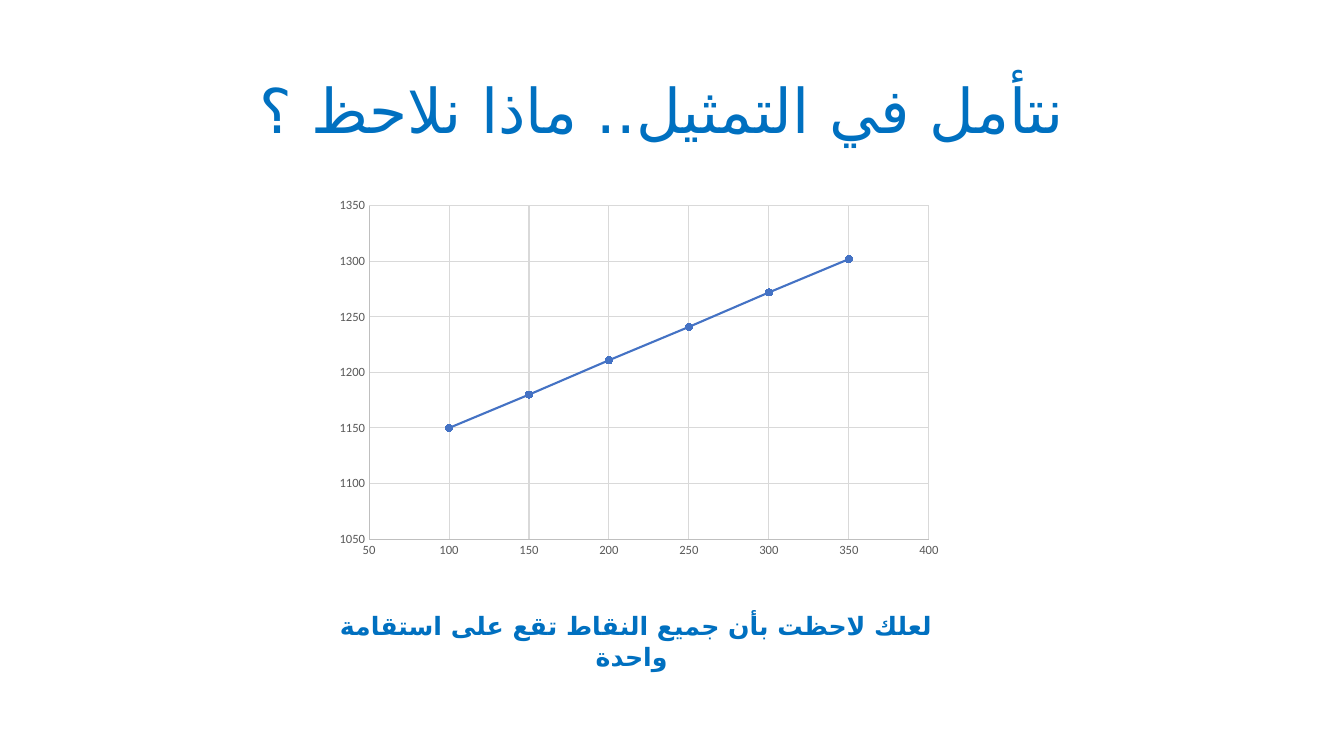
from lxml import etree
from pptx import Presentation
from pptx.chart.data import XyChartData
from pptx.dml.color import RGBColor
from pptx.enum.chart import XL_CHART_TYPE, XL_MARKER_STYLE, XL_TICK_MARK
from pptx.enum.text import MSO_ANCHOR, MSO_AUTO_SIZE, PP_ALIGN
from pptx.oxml.ns import qn
from pptx.util import Pt

SCATTER = XL_CHART_TYPE.XY_SCATTER_LINES
CIRCLE = XL_MARKER_STYLE.CIRCLE
NO_TICK = XL_TICK_MARK.NONE
MIDDLE = MSO_ANCHOR.MIDDLE
NO_AUTOFIT = MSO_AUTO_SIZE.NONE
CENTER = PP_ALIGN.CENTER

TEXT_BLUE = RGBColor(0x00, 0x70, 0xC0)
SERIES_BLUE = RGBColor(0x44, 0x72, 0xC4)
LABEL_GRAY = RGBColor(0x59, 0x59, 0x59)
AXIS_GRAY = RGBColor(0xBF, 0xBF, 0xBF)
GRID_GRAY = RGBColor(0xD9, 0xD9, 0xD9)
TEXT_FONT = "Lato"
ARABIC_FONT = "DejaVu Sans"
CHART_FONT = "Calibri"

TITLE = "نتأمل في التمثيل.. ماذا نلاحظ ؟ "
CAPTION = "لعلك لاحظت بأن جميع النقاط تقع على استقامة واحدة "
POINTS = [(100, 1150), (150, 1180), (200, 1211),
          (250, 1241), (300, 1272), (350, 1302)]


def write_text(tf, text, size, bold=False):
    tf.word_wrap = True
    tf.auto_size = NO_AUTOFIT
    p = tf.paragraphs[0]
    p.alignment = CENTER
    r = p.add_run()
    r.text = text
    r.font.size = Pt(size)
    r.font.bold = bold
    r.font.name = TEXT_FONT
    r.font.color.rgb = TEXT_BLUE
    cs = etree.SubElement(r.font._element, qn("a:cs"))
    cs.set("typeface", ARABIC_FONT)
    return p


def add_title(s):
    sp = s.shapes.title
    sp.left, sp.top, sp.width, sp.height = Pt(66), Pt(28.75), Pt(828), Pt(104.4)
    sp.text_frame.vertical_anchor = MIDDLE
    write_text(sp.text_frame, TITLE, 44).line_spacing = 0.9


def add_caption(s):
    sp = s.shapes.add_textbox(Pt(233.3), Pt(432.7), Pt(442), Pt(29))
    write_text(sp.text_frame, CAPTION, 18, bold=True)


def style_line(line, color, width):
    line.color.rgb = color
    line.width = Pt(width)


def style_axis(axis, low, high):
    axis.minimum_scale, axis.maximum_scale = low, high
    axis.major_unit = 50
    axis.major_tick_mark = axis.minor_tick_mark = NO_TICK
    axis.has_major_gridlines = True
    style_line(axis.major_gridlines.format.line, GRID_GRAY, 0.75)
    style_line(axis.format.line, AXIS_GRAY, 0.75)
    font = axis.tick_labels.font
    font.size, font.name = Pt(9), CHART_FONT
    font.color.rgb = LABEL_GRAY


def add_scatter(s):
    data = XyChartData()
    points = data.add_series("Series 1")
    for x, y in POINTS:
        points.add_data_point(x, y)
    chart = s.shapes.add_chart(
        SCATTER, Pt(233.6), Pt(136.4), Pt(445.7), Pt(267.4), data).chart
    chart.has_title = chart.has_legend = False
    chart.font.size, chart.font.name = Pt(10), CHART_FONT
    style_axis(chart.category_axis, 50, 400)
    style_axis(chart.value_axis, 1050, 1350)
    plot = chart.plots[0]
    plot.vary_by_categories = False
    series = plot.series[0]
    series.smooth = False
    style_line(series.format.line, SERIES_BLUE, 1.5)
    marker = series.marker
    marker.style, marker.size = CIRCLE, 5
    marker.format.fill.solid()
    marker.format.fill.fore_color.rgb = SERIES_BLUE
    style_line(marker.format.line, SERIES_BLUE, 0.75)


def main():
    prs = Presentation()
    prs.slide_width, prs.slide_height = Pt(960), Pt(540)
    s = prs.slides.add_slide(prs.slide_layouts[5])
    add_scatter(s)
    add_title(s)
    add_caption(s)
    prs.save("out.pptx")


if __name__ == "__main__":
    main()
